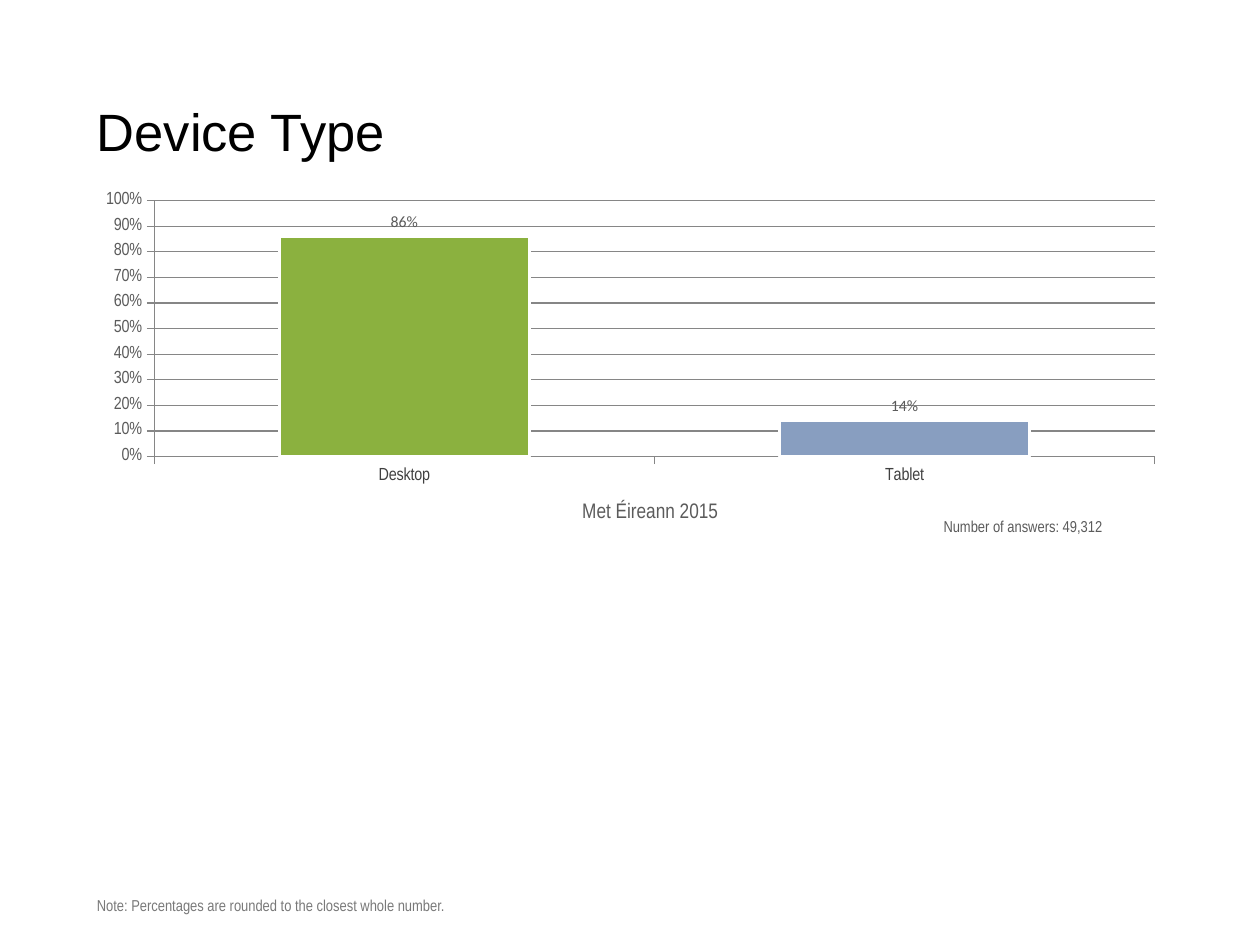
from pptx import Presentation
from pptx.chart.data import CategoryChartData as Data
from pptx.dml.color import RGBColor
from pptx.enum.chart import XL_CHART_TYPE as Kind, XL_LABEL_POSITION as Spot, XL_TICK_MARK as Tick
from pptx.enum.text import MSO_ANCHOR as Anchor, PP_ALIGN as Align
from pptx.oxml import parse_xml
from pptx.util import Inches, Pt


def paint(font, name, size, tint):
    font.name = name
    font.size = Pt(size)
    font.bold = False
    font.color.rgb = RGBColor.from_string(tint)


prs = Presentation()
prs.slide_width = Inches(10)
prs.slide_height = Inches(7.5)
slide = prs.slides.add_slide(prs.slide_layouts[6])

texts = [
    ("Device Type", 0.67, 0.76, 8.66, 0.55, "Arial", 30, "000000", Align.LEFT, Anchor.MIDDLE),
    ("Number of answers: 49,312", 7.39, 4.05, 1.76, 0.4, "Arial Narrow", 9, "5B5B5B", Align.LEFT, Anchor.TOP),
    ("Met Éireann 2015", 3.19, 3.9, 3.94, 0.3, "Arial Narrow", 12, "5B5B5B", Align.CENTER, Anchor.TOP),
    ("Note: Percentages are rounded to the closest whole number.",
     0.67, 7.06, 5.68, 0.25, "Arial Narrow", 9, "797979", Align.LEFT, Anchor.TOP),
]
for words, left, top, width, height, face, size, tint, align, anchor in texts:
    box = slide.shapes.add_textbox(Inches(left), Inches(top), Inches(width), Inches(height))
    frame = box.text_frame
    frame.word_wrap = True
    frame.vertical_anchor = anchor
    para = frame.paragraphs[0]
    para.text = words
    para.alignment = align
    paint(para.font, face, size, tint)

data = Data(number_format="0%")
data.categories = ["Desktop", "Tablet"]
data.add_series("Series 1", [0.86, 0.14])
chart = slide.shapes.add_chart(
    Kind.COLUMN_CLUSTERED, Inches(0.67), Inches(1.48), Inches(8.66), Inches(2.41), data).chart
chart.has_legend = False
chart.has_title = False
paint(chart.font, "Arial Narrow", 10, "000000")

for axis, tint in [(chart.category_axis, "404040"), (chart.value_axis, "5B5B5B")]:
    axis.major_tick_mark = Tick.OUTSIDE
    axis.minor_tick_mark = Tick.NONE
    axis.format.line.color.rgb = RGBColor.from_string("868686")
    axis.format.line.width = Pt(0.75)
    paint(axis.tick_labels.font, "Arial Narrow", 10, tint)

scale = chart.value_axis
scale.minimum_scale = 0
scale.maximum_scale = 1
scale.major_unit = 0.1
scale.tick_labels.number_format = "0%"
scale.tick_labels.number_format_is_linked = False
scale.has_major_gridlines = True
grid = scale.major_gridlines.format.line
grid.color.rgb = RGBColor.from_string("868686")
grid.width = Pt(0.75)

plot = chart.plots[0]
plot.gap_width = 100
plot.vary_by_categories = False
bars = plot.series[0]
bars.format.fill.solid()
bars.format.fill.fore_color.rgb = RGBColor.from_string("BBE0E3")
for i, tint in enumerate(["8BB13F", "889EC0"]):
    look = bars.points[i].format
    look.fill.solid()
    look.fill.fore_color.rgb = RGBColor.from_string(tint)
    look.line.color.rgb = RGBColor.from_string("FFFFFF")
    look.line.width = Pt(1.5)

tags = bars.data_labels
tags.show_value = True
tags.number_format = "0%"
tags.number_format_is_linked = False
tags.position = Spot.OUTSIDE_END
paint(tags.font, "Calibri", 9, "5B5B5B")

area = chart.element.chart.plotArea
for old in area.findall("{*}layout"):
    area.remove(old)
area.insert(0, parse_xml(
    '<c:layout xmlns:c="http://schemas.openxmlformats.org/drawingml/2006/chart"><c:manualLayout>'
    '<c:layoutTarget val="inner"/><c:xMode val="edge"/><c:yMode val="edge"/>'
    '<c:x val="0.064"/><c:y val="0.047"/><c:w val="0.917"/><c:h val="0.843"/>'
    '</c:manualLayout></c:layout>'))

prs.save("out.pptx")
